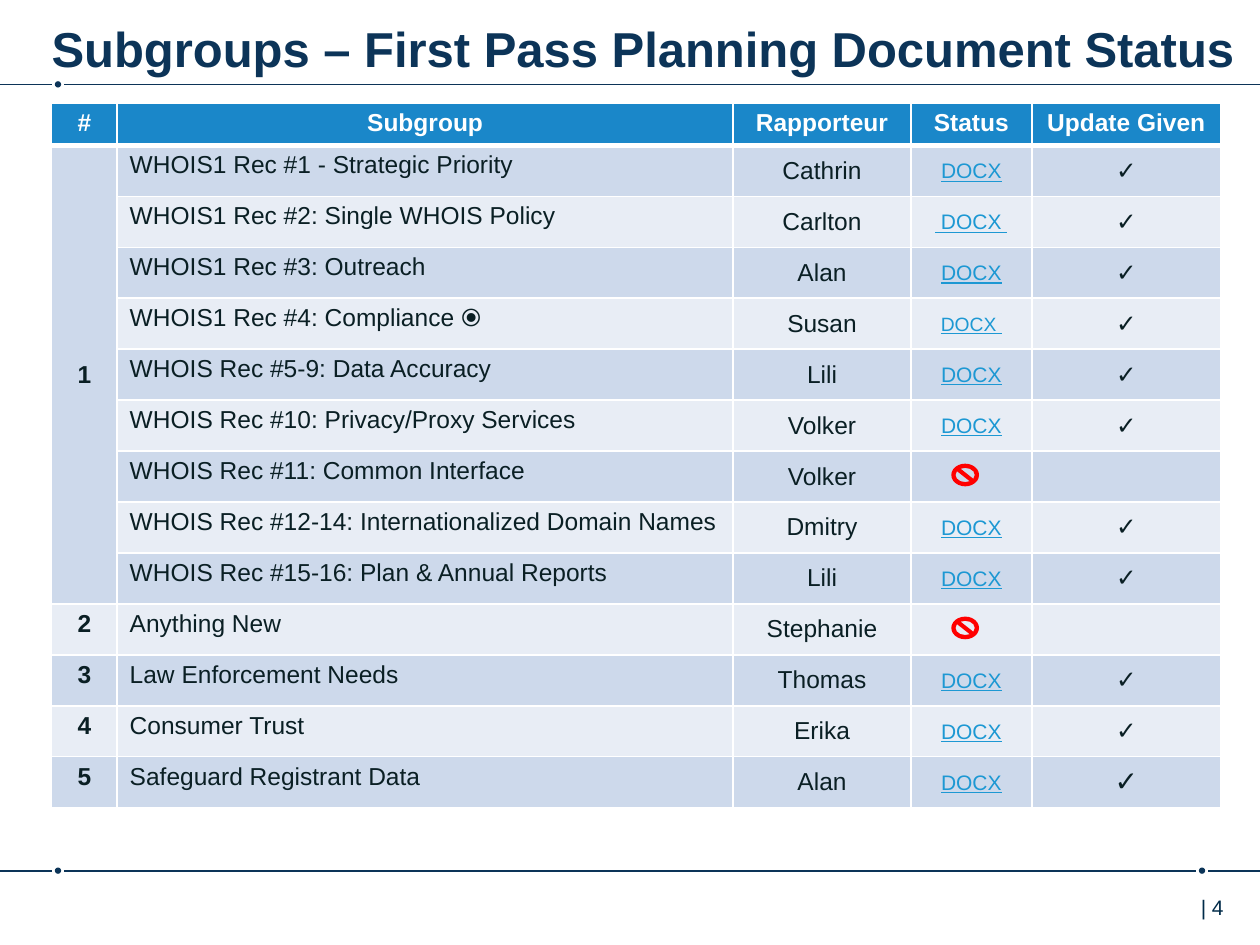
import pptx
import pptx.util
import pptx.dml.color
import pptx.enum.shapes
import pptx.enum.text
import pptx.oxml
import pptx.oxml.ns
import lxml.etree

TITLE = "Subgroups – First Pass Planning Document Status"
PAGE = "| 4"
HEADS = ["#", "Subgroup", "Rapporteur", "Status", "Update Given"]
DOC, TICK, NONE = "DOCX", "✓", ""
ROWS = [
    ("1", "WHOIS1 Rec #1 - Strategic Priority", "Cathrin", DOC, TICK),
    ("", "WHOIS1 Rec #2: Single WHOIS Policy", "Carlton", " DOCX ", TICK),
    ("", "WHOIS1 Rec #3: Outreach", "Alan", DOC, TICK),
    ("", "WHOIS1 Rec #4: Compliance ⦿", "Susan", "DOCX ", TICK),
    ("", "WHOIS Rec #5-9: Data Accuracy", "Lili", DOC, TICK),
    ("", "WHOIS Rec #10: Privacy/Proxy Services", "Volker", DOC, TICK),
    ("", "WHOIS Rec #11: Common Interface", "Volker", NONE, NONE),
    ("", "WHOIS Rec #12-14: Internationalized Domain Names", "Dmitry", DOC, TICK),
    ("", "WHOIS Rec #15-16: Plan & Annual Reports", "Lili", DOC, TICK),
    ("2", "Anything New", "Stephanie", NONE, NONE),
    ("3", "Law Enforcement Needs", "Thomas", DOC, TICK),
    ("4", "Consumer Trust", "Erika", DOC, TICK),
    ("5", "Safeguard Registrant Data", "Alan", DOC, TICK),
]
SIZES = {(4, 3): 11, (13, 4): 16}  # (row, column): text size that differs
GROUP = 9  # rows that share the first number
COLORS = {"navy": "0C3458", "page": "002B49", "head": "1A87C9", "dark": "CDD9EB",
          "light": "E8EDF5", "text": "0A1F24", "link": "1D98D3",
          "white": "FFFFFF", "red": "FF0000"}
COLS = [0.52, 4.89, 1.41, 0.96, 1.5]
LEFT, TOP, HEIGHT, HEAD = 0.41, 0.82, 5.58, 0.32
STEP = (HEIGHT - HEAD) / len(ROWS)
RULES = {0.67: [LEFT + 0.05], 6.91: [LEFT + 0.05, 9.54]}  # y: x of each dot
DOT, GAP = 0.05, 0.05
SIGN = (0.22, 0.18)

Inch = pptx.util.Inches
Shape = pptx.enum.shapes.MSO_SHAPE
Anchor = pptx.enum.text.MSO_ANCHOR
Align = pptx.enum.text.PP_ALIGN


def color(name):
    return pptx.dml.color.RGBColor.from_string(COLORS[name])


def style(frame, size, tint, bold=False, line=False):
    for run in frame.paragraphs[0].runs:
        font = run.font
        font.name, font.size = "Arial", pptx.util.Pt(size)
        font.bold, font.underline = bold, line
        font.color.rgb = color(tint)


def inset(box, *sides):
    """Set the left, top, right and bottom margins in inches."""
    names = ("margin_left", "margin_top", "margin_right", "margin_bottom")
    for name, side in zip(names, sides):
        setattr(box, name, Inch(side))


def draw(slide, kind, mid, size, tint):
    """Add a plain filled shape centred on mid."""
    (x, y), (w, h) = mid, size
    shape = slide.shapes.add_shape(kind, Inch(x - w / 2), Inch(y - h / 2), Inch(w), Inch(h))
    shape.shadow.inherit = False
    shape.fill.solid()
    shape.fill.fore_color.rgb = color(tint)
    shape.line.fill.background()


def rule(slide, y, dots):
    """Draw a line across the slide, broken around each dot."""
    ends = [0] + [x + side for x in dots for side in (-GAP, GAP)] + [10]
    for start, end in zip(ends[::2], ends[1::2]):
        line = slide.shapes.add_connector(
            pptx.enum.shapes.MSO_CONNECTOR.STRAIGHT, Inch(start), Inch(y), Inch(end), Inch(y))
        line.line.color.rgb = color("navy")
        line.line.width = pptx.util.Pt(1)
        lxml.etree.SubElement(line._element.spPr, pptx.oxml.ns.qn("a:effectLst"))
    for x in dots:
        draw(slide, Shape.OVAL, (x, y), (DOT, DOT), "navy")


def edge(cell, row):
    """Give a cell white borders, thick below the header."""
    thick = {"lnB": row == 0, "lnT": row == 1}
    for side in ("lnL", "lnR", "lnT", "lnB"):
        width = pptx.util.Pt(3 if thick.get(side) else 1)
        cell._tc.get_or_add_tcPr().append(pptx.oxml.parse_xml(
            f'<a:{side} {pptx.oxml.ns.nsdecls("a")} w="{width}"><a:solidFill>'
            f'<a:srgbClr val="{COLORS["white"]}"/></a:solidFill></a:{side}>'))


def fill(cell, row, col, text):
    edge(cell, row)
    cell.fill.solid()
    band = "dark" if row % 2 or (col == 0 and row <= GROUP) else "light"
    cell.fill.fore_color.rgb = color(band if row else "head")
    if not text:
        return
    link = row > 0 and col == 3
    cell.text_frame.text = text
    cell.text_frame.paragraphs[0].alignment = (
        Align.LEFT if row and col == 1 else Align.CENTER)
    style(cell.text_frame, SIZES.get((row, col), 12 if link else 14),
          "white" if row == 0 else "link" if link else "text",
          bold=row == 0 or col == 0, line=link)
    middle = row and (col > 1 or (row, col) == (1, 0))
    cell.vertical_anchor = Anchor.MIDDLE if middle else Anchor.TOP
    if link:
        inset(cell, 0.01, 0.01, 0.01, 0)


def grid(slide):
    frame = slide.shapes.add_table(len(ROWS) + 1, len(COLS), Inch(LEFT), Inch(TOP),
                                   Inch(sum(COLS)), Inch(HEIGHT))
    table = frame.table
    for col, width in zip(table.columns, COLS):
        col.width = Inch(width)
    for num, row in enumerate(table.rows):
        row.height = Inch(STEP if num else HEAD)
    for r, row in enumerate([HEADS] + ROWS):
        for c, text in enumerate(row):
            fill(table.cell(r, c), r, c, text)
    table.cell(1, 0).merge(table.cell(GROUP, 0))
    x = LEFT + sum(COLS[:3]) + COLS[3] / 2
    for num, row in enumerate(ROWS):
        if row[3] == NONE:
            y = TOP + HEAD + (num + 0.5) * STEP
            draw(slide, Shape.NO_SYMBOL, (x - 0.05, y), SIGN, "red")


def main():
    deck = pptx.Presentation()
    deck.slide_width, deck.slide_height = Inch(10), Inch(7.5)
    slide = deck.slides.add_slide(deck.slide_layouts[5])
    for y, dots in RULES.items():
        rule(slide, y, dots)

    title = slide.shapes.title
    title.left, title.top, title.width, title.height = map(Inch, (LEFT, 0.05, 9.48, 0.49))
    frame = title.text_frame
    frame.text = TITLE
    frame.auto_size = pptx.enum.text.MSO_AUTO_SIZE.NONE
    frame.vertical_anchor = Anchor.TOP
    frame.paragraphs[0].alignment = Align.LEFT
    inset(frame, 0, 0.1, 0, 0)
    style(frame, 28, "navy", bold=True)

    page = slide.shapes.add_textbox(*map(Inch, (9.29, 7.05, 0.87, 0.4))).text_frame
    page.word_wrap = True
    page.text = PAGE
    inset(page, 0.24, 0.05, 0.1, 0.05)
    style(page, 12, "page")

    grid(slide)
    deck.save("out.pptx")


if __name__ == "__main__":
    main()
